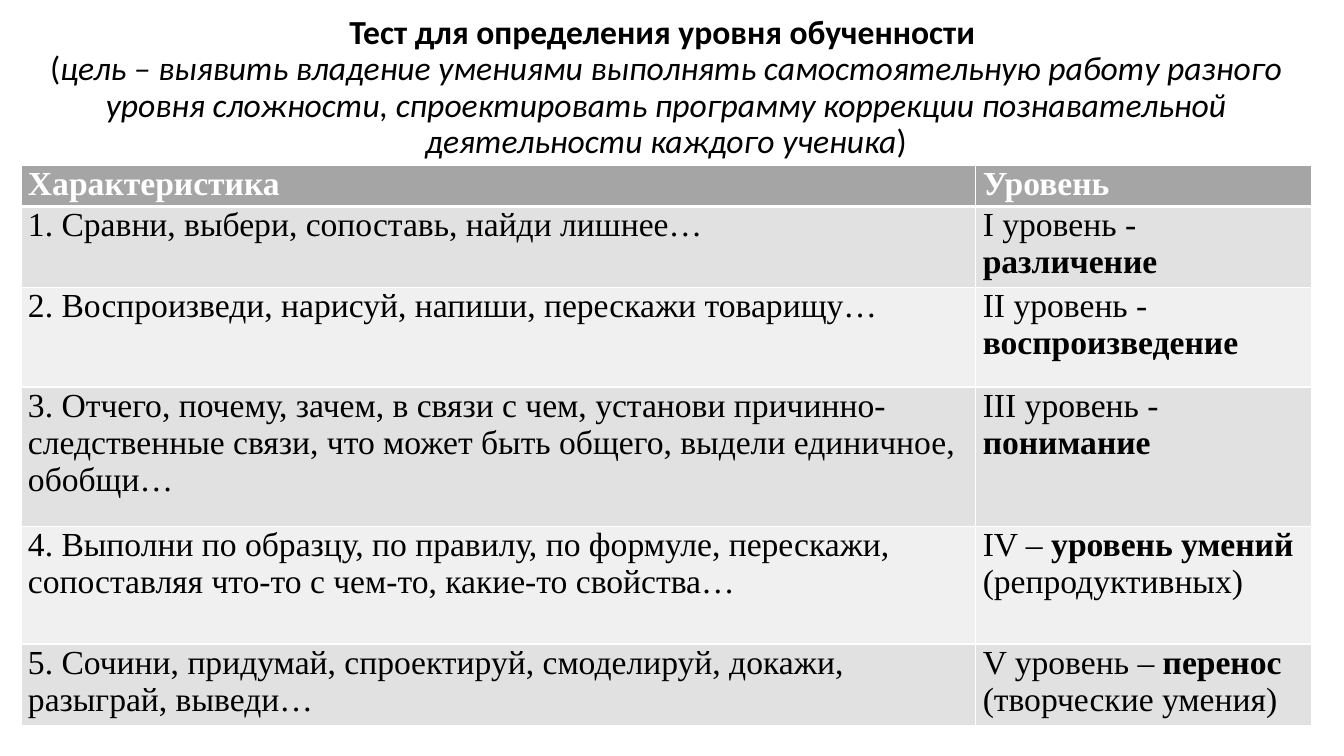
from lxml.etree import SubElement
from pptx import Presentation
from pptx.dml.color import RGBColor
from pptx.enum.text import MSO_ANCHOR as Anchor, PP_ALIGN as Align
from pptx.oxml.ns import qn
from pptx.util import Pt

TITLE_BOX = (15, 7.2, 921.6, 111.6)
TABLE_BOX = (15, 118.1, 921.6, 387.4)
COLUMN_SHARE = 0.74
ROW_HEIGHTS = (29.5, 44.6, 71.3, 99.4, 84.2, 58.4)
BLACK, WHITE, HEADER_FILL = "000000", "FFFFFF", "A5A5A5"
BANDS = ("E1E1E1", "F0F0F0")

# Each run is (text, format values)
BOLD, PLAIN, ITALIC = {"bold": True}, {"bold": False}, {"bold": False, "italic": True}
HEADING = ("Тест для определения уровня обученности ", BOLD)
PURPOSE = [
    ("(", PLAIN),
    ("цель – выявить владение умениями выполнять самостоятельную работу разного "
     "уровня сложности, спроектировать программу коррекции познавательной "
     "деятельности каждого ученика", ITALIC),
    (")", PLAIN),
]
HEADER = ("Характеристика", "Уровень")
LEVELS = [
    ("1. Сравни, выбери, сопоставь, найди лишнее…",
     [("I уровень - ", PLAIN), ("различение", BOLD)]),
    ("2. Воспроизведи, нарисуй, напиши, перескажи товарищу…",
     [("II уровень - ", PLAIN), ("воспроизведение", BOLD)]),
    ("3. Отчего, почему, зачем, в связи с чем, установи причинно-следственные связи, "
     "что может быть общего, выдели единичное, обобщи…",
     [("III уровень - ", PLAIN), ("понимание", BOLD)]),
    ("4. Выполни по образцу, по правилу, по формуле, перескажи, "
     "сопоставляя что-то с чем-то, какие-то свойства…",
     [("IV – ", PLAIN), ("уровень умений ", BOLD), ("(репродуктивных)", PLAIN)]),
    ("5. Сочини, придумай, спроектируй, смоделируй, докажи, разыграй, выведи…",
     [("V уровень – ", PLAIN), ("перенос ", BOLD), ("(творческие умения)", PLAIN)]),
]


def color(hex_string):
    return RGBColor.from_string(hex_string)


def set_values(target, values):
    for name, value in values.items():
        setattr(target, name, value)


def add_runs(paragraph, runs, font_name, font_color):
    for text, values in runs:
        run = paragraph.add_run()
        run.text = text
        set_values(run.font, {"name": font_name, "size": Pt(24), **values})
        run.font.color.rgb = color(font_color)


def set_borders(cell, widths):
    properties = cell._tc.get_or_add_tcPr()
    # Border lines must come before the fill
    for index, (side, width) in enumerate(widths.items()):
        line = SubElement(properties, qn(f"a:ln{side}"), w=str(Pt(width)))
        fill = SubElement(line, qn("a:solidFill"))
        SubElement(fill, qn("a:srgbClr"), val=WHITE)
        properties.insert(index, line)


def add_title(slide, box):
    shape = slide.shapes.add_textbox(*map(Pt, box))
    set_values(shape.text_frame, {"word_wrap": True, "vertical_anchor": Anchor.MIDDLE})
    paragraph = shape.text_frame.paragraphs[0]
    set_values(paragraph, {"alignment": Align.CENTER, "line_spacing": 0.9})
    add_runs(paragraph, [HEADING], "Calibri", BLACK)
    paragraph.add_line_break()
    add_runs(paragraph, PURPOSE, "Calibri", BLACK)


def fill_cell(cell, runs, fill, font_color, top, bottom):
    set_values(cell, {"margin_left": Pt(5), "margin_right": Pt(5),
                      "margin_top": 0, "margin_bottom": 0})
    cell.fill.solid()
    cell.fill.fore_color.rgb = color(fill)
    set_borders(cell, {"L": 1, "R": 1, "T": top, "B": bottom})
    add_runs(cell.text_frame.paragraphs[0], runs, "Times New Roman", font_color)


def add_levels_table(slide, box):
    table = slide.shapes.add_table(len(ROW_HEIGHTS), 2, *map(Pt, box)).table
    for column, share in zip(table.columns, (COLUMN_SHARE, 1 - COLUMN_SHARE)):
        column.width = Pt(round(box[2] * share, 1))
    for row, height in zip(table.rows, ROW_HEIGHTS):
        row.height = Pt(height)

    # Header row with a thick line below
    for column, text in enumerate(HEADER):
        fill_cell(table.cell(0, column), [(text, BOLD)], HEADER_FILL, WHITE, 1, 3)

    # Banded level rows
    for index, (task, level) in enumerate(LEVELS):
        for column, runs in enumerate(([(task, PLAIN)], level)):
            fill_cell(table.cell(index + 1, column), runs, BANDS[index % 2], BLACK,
                      1 if index else 3, 1)


def main():
    presentation = Presentation()
    set_values(presentation, {"slide_width": Pt(960), "slide_height": Pt(540)})
    slide = presentation.slides.add_slide(presentation.slide_layouts[6])
    add_title(slide, TITLE_BOX)
    add_levels_table(slide, TABLE_BOX)
    presentation.save("out.pptx")


if __name__ == "__main__":
    main()
